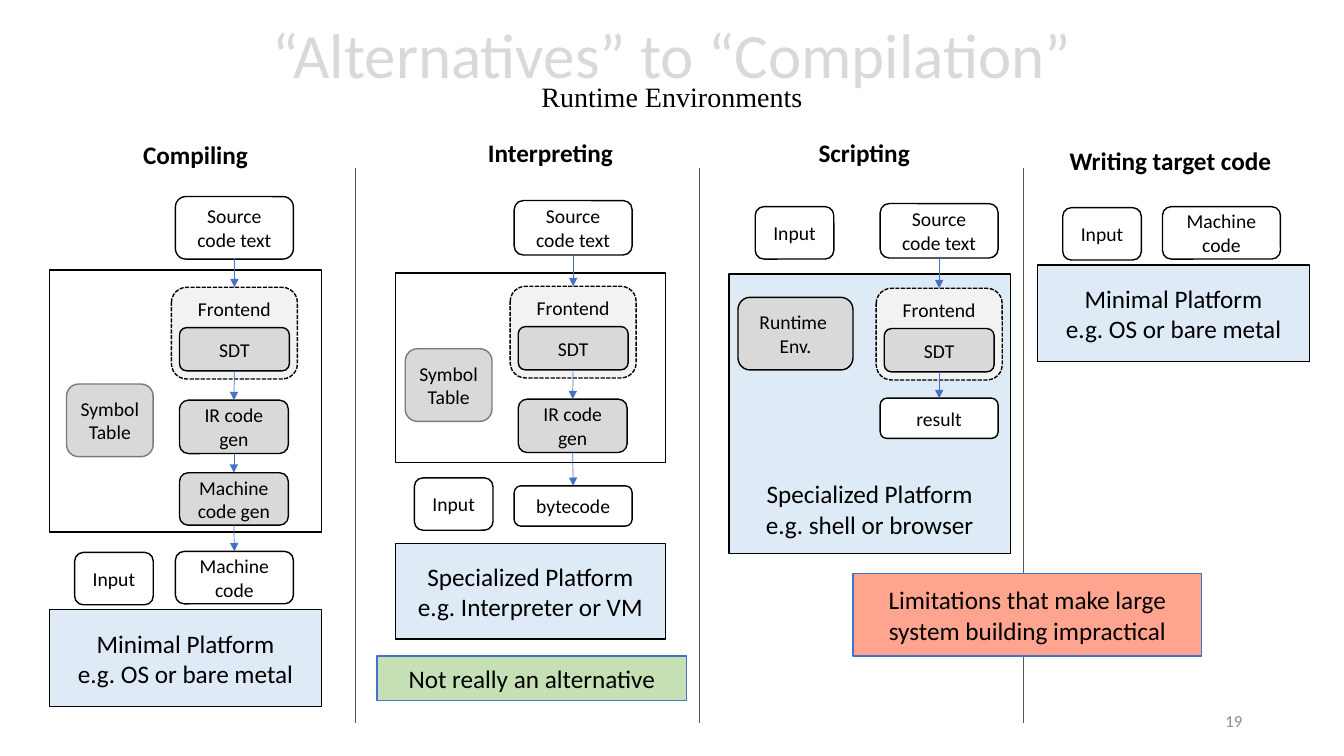
from lxml import etree
from pptx import Presentation
from pptx.dml.color import RGBColor
from pptx.enum.dml import MSO_LINE
from pptx.enum.shapes import MSO_CONNECTOR, MSO_SHAPE
from pptx.enum.text import MSO_ANCHOR, MSO_AUTO_SIZE, PP_ALIGN
from pptx.oxml.ns import qn
from pptx.util import Pt

PX = 9144  # 100 px to the inch

BLACK = RGBColor(0x00, 0x00, 0x00)
WHITE = RGBColor(0xFF, 0xFF, 0xFF)
TITLE_GREY = RGBColor(0xD9, 0xD9, 0xD9)
STAGE_GREY = RGBColor(0xD9, 0xD9, 0xD9)
FRONTEND_GREY = RGBColor(0xF2, 0xF2, 0xF2)
TABLE_EDGE = RGBColor(0x7A, 0x7A, 0x7A)
NUMBER_GREY = RGBColor(0x8C, 0x8C, 0x8C)
DIVIDER_GREY = RGBColor(0x59, 0x59, 0x59)
PLATFORM_BLUE = RGBColor(0xDE, 0xEB, 0xF7)
BLUE = RGBColor(0x44, 0x72, 0xC4)
GREEN = RGBColor(0xC5, 0xE0, 0xB4)
RED = RGBColor(0xFF, 0xA4, 0x8F)

prs = Presentation()
prs.slide_width, prs.slide_height = 1333 * PX, 750 * PX
slide = prs.slides.add_slide(prs.slide_layouts[5])
shapes = slide.shapes


def add_box(text, x, y, w, h, fill=WHITE, edge=BLACK, size=14,
            kind=MSO_SHAPE.ROUNDED_RECTANGLE, anchor=MSO_ANCHOR.MIDDLE):
    box = shapes.add_shape(kind, x * PX, y * PX, w * PX, h * PX)
    box.shadow.inherit = False
    box.fill.solid()
    box.fill.fore_color.rgb = fill
    box.line.color.rgb = edge
    box.line.width = Pt(1)
    frame = box.text_frame
    frame.word_wrap = True
    frame.vertical_anchor = anchor
    frame.text = text
    for paragraph in frame.paragraphs:
        paragraph.alignment = PP_ALIGN.CENTER
        paragraph.font.name = "Calibri"
        paragraph.font.size = Pt(size)
        paragraph.font.color.rgb = BLACK
    return box


def add_line(x1, y1, x2, y2, color):
    line = shapes.add_connector(MSO_CONNECTOR.STRAIGHT,
                                x1 * PX, y1 * PX, x2 * PX, y2 * PX)
    line.line.color.rgb = color
    line.line.width = Pt(0.5)
    etree.SubElement(line._element.spPr, qn("a:effectLst"))
    return line


# Title with subtitle line
title = shapes.title
title.left, title.top, title.width, title.height = 0, PX, 1333 * PX, 145 * PX
title.text_frame.auto_size = MSO_AUTO_SIZE.NONE
title.text_frame.vertical_anchor = MSO_ANCHOR.MIDDLE
heading = title.text_frame.paragraphs[0]
heading.alignment = PP_ALIGN.CENTER
heading.line_spacing = 0.7
for text, font, size, color in [
        ("“Alternatives” to “Compilation”", "Calibri", 45, TITLE_GREY),
        ("Runtime Environments", "Times New Roman", 20, BLACK)]:
    if heading.runs:
        heading.add_line_break()
    run = heading.add_run()
    run.text = text
    run.font.name = font
    run.font.size = Pt(size)
    run.font.color.rgb = color

# Column headings and page number
for text, x, y, w, size, color, bold, align in [
        ("Compiling", 132, 133, 125, 18, BLACK, True, PP_ALIGN.LEFT),
        ("Interpreting", 474, 131, 145, 18, BLACK, True, PP_ALIGN.LEFT),
        ("Scripting", 802, 131, 111, 18, BLACK, True, PP_ALIGN.LEFT),
        ("Writing target code", 1051, 139, 222, 18, BLACK, True, PP_ALIGN.LEFT),
        ("19", 942, 695, 300, 12, NUMBER_GREY, False, PP_ALIGN.RIGHT)]:
    label = shapes.add_textbox(x * PX, y * PX, w * PX, 40 * PX)
    label.text_frame.word_wrap = not bold
    label.text_frame.vertical_anchor = MSO_ANCHOR.MIDDLE
    paragraph = label.text_frame.paragraphs[0]
    paragraph.text = text
    paragraph.alignment = align
    paragraph.font.name = "Calibri"
    paragraph.font.size = Pt(size)
    paragraph.font.bold = bold
    paragraph.font.color.rgb = color

# Column dividers
for x in (352, 694, 1015):
    add_line(x, 167, x, 717, DIVIDER_GREY)

# Tool frames, platforms and verdicts
RECT = MSO_SHAPE.RECTANGLE
add_box("", 49, 268, 270, 260, kind=RECT)
add_box("", 392, 271, 268, 188, kind=RECT)
scripting_platform = add_box("Specialized Platform\ne.g. shell or browser",
                             723, 272, 279, 277, PLATFORM_BLUE, size=18,
                             kind=RECT, anchor=MSO_ANCHOR.BOTTOM)
scripting_platform.text_frame.margin_bottom = 14 * PX
for text, x, y, w, h, fill, edge in [
        ("Minimal Platform\ne.g. OS or bare metal",
         49, 605, 270, 96, PLATFORM_BLUE, BLACK),
        ("Specialized Platform\ne.g. Interpreter or VM",
         392, 539, 268, 95, PLATFORM_BLUE, BLACK),
        ("Minimal Platform\ne.g. OS or bare metal",
         1029, 263, 270, 96, PLATFORM_BLUE, BLACK),
        ("Limitations that make large system building impractical",
         846, 569, 346, 82, RED, BLUE),
        ("Not really an alternative", 374, 651, 307, 44, GREEN, BLUE)]:
    add_box(text, x, y, w, h, fill, edge, size=18, kind=RECT)

# Inputs, helper stages and the hand-written machine code
for x, y in [(74, 548), (411, 474), (749, 205), (1054, 206)]:
    add_box("Input", x, y, 78, 52)
for x, y in [(66, 381), (402, 346)]:
    add_box("Symbol Table", x, y, 86, 72, STAGE_GREY, TABLE_EDGE)
add_box("Runtime \nEnv.", 732, 295, 114, 72, STAGE_GREY)
add_box("Machine code", 1153, 205, 117, 52)

# Pipelines: frontend position, source box, then the stages after SDT
pipelines = [
    (170, 285, 195, 62, [("IR code gen", 178, 397, 108, 53, STAGE_GREY),
                         ("Machine code gen", 178, 469, 108, 52, STAGE_GREY),
                         ("Machine code", 174, 547, 117, 52, WHITE)]),
    (506, 284, 199, 54, [("IR code gen", 514, 396, 108, 53, STAGE_GREY),
                         ("bytecode", 510, 482, 117, 40, WHITE)]),
    (869, 286, 202, 54, [("result", 873, 395, 117, 40, WHITE)]),
]
for x, y, source_y, source_h, stages in pipelines:
    source = add_box("Source code text", x + 4, source_y, 117, source_h)
    frontend = add_box("Frontend", x, y, 125, 91, FRONTEND_GREY,
                       anchor=MSO_ANCHOR.TOP)
    frontend.line.dash_style = MSO_LINE.SQUARE_DOT
    sdt = add_box("SDT", x + 8, y + 40, 109, 43, STAGE_GREY)
    chain = [sdt] + [add_box(*stage) for stage in stages]
    for upper, lower in [(source, frontend), *zip(chain, chain[1:])]:
        arrow = add_line(0, 0, 0, 0, BLUE)
        arrow.begin_connect(upper, 2)
        arrow.end_connect(lower, 0)
        etree.SubElement(arrow.line._get_or_add_ln(), qn("a:tailEnd"),
                         type="triangle")

prs.save("out.pptx")
